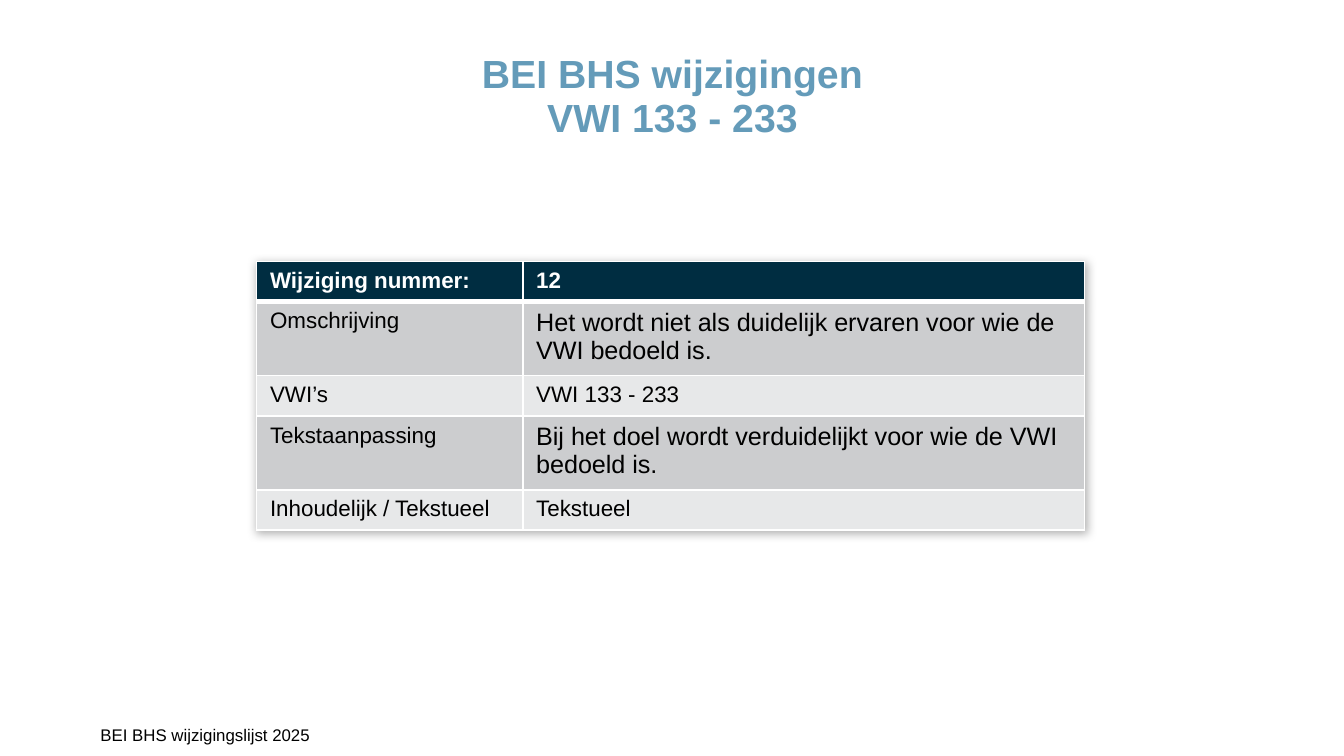
from lxml import etree
from pptx import Presentation, util as u
from pptx.dml.color import RGBColor
from pptx.enum import text as t
from pptx.oxml import ns

FONT = "Arial"
BLUE, NAVY, BLACK, WHITE = "649BB9", "002D41", "000000", "FFFFFF"
BANDS = ["CCCDCF", "E7E8E9"]


def rgb(code):
    return RGBColor.from_string(code)


def node(root, tag, **attrs):
    return etree.SubElement(root, ns.qn(tag), attrs)


class Deck:
    def __init__(self, wide, high):
        self.prs = Presentation()
        self.prs.slide_width, self.prs.slide_height = u.Cm(wide), u.Cm(high)
        self.slide = self.prs.slides.add_slide(self.prs.slide_layouts[6])

    def run(self, para, words, size, color, bold=False):
        run = para.add_run()
        run.text = words
        font = run.font
        font.name, font.size, font.bold = FONT, u.Pt(size), bold
        font.color.rgb = rgb(color)

    def text(self, box, lines, size, color, bold=False,
             align=t.PP_ALIGN.LEFT, space=1.0, inset=0):
        frame = self.slide.shapes.add_textbox(*map(u.Cm, box)).text_frame
        frame.word_wrap = True
        frame.margin_top = frame.margin_right = frame.margin_bottom = 0
        frame.margin_left = u.Cm(inset)
        para = frame.paragraphs[0]
        para.alignment, para.line_spacing = align, space
        for i, line in enumerate(lines):
            if i:
                para.add_line_break()
            self.run(para, line, size, color, bold)

    def edges(self, cell, base):
        props = cell._tc.get_or_add_tcPr()
        for side, width in zip("LRTB", (1, 1, 1, base)):
            line = node(props, f"a:ln{side}", w=str(u.Pt(width)))
            node(node(line, "a:solidFill"), "a:srgbClr", val=WHITE)

    def shade(self, grid):
        effects = node(grid._tbl.tblPr, "a:effectLst")
        # Effects come before the style id
        grid._tbl.tblPr.insert(0, effects)
        glow = node(effects, "a:outerShdw", blurRad=str(u.Pt(5)),
                    dist=str(u.Pt(1)), dir="5400000", rotWithShape="0")
        node(node(glow, "a:srgbClr", val=BLACK), "a:alpha", val="30000")

    def table(self, left, top, cols, rows, data):
        grid = self.slide.shapes.add_table(
            len(rows), len(cols), u.Cm(left), u.Cm(top),
            u.Cm(sum(cols)), u.Cm(sum(rows))).table
        for col, wide in zip(grid.columns, cols):
            col.width = u.Cm(wide)
        for r, (high, line) in enumerate(zip(rows, data)):
            grid.rows[r].height = u.Cm(high)
            head = r == 0
            for c, words in enumerate(line):
                cell = grid.cell(r, c)
                # Long answers are set larger
                size = 13.5 if len(words) > 40 else 12
                self.run(cell.text_frame.paragraphs[0], words, size,
                         WHITE if head else BLACK, head)
                self.edges(cell, 3 if head else 1)
                cell.fill.solid()
                cell.fill.fore_color.rgb = rgb(
                    NAVY if head else BANDS[(r - 1) % 2])
        self.shade(grid)


def main():
    deck = Deck(25.4, 14.29)

    # Title
    deck.text((4.85, 0.99, 15.72, 2.39),
              ["BEI BHS wijzigingen", "VWI 133 - 233"], 21, BLUE,
              bold=True, align=t.PP_ALIGN.CENTER, space=0.95)

    # Change details
    low, tall = 0.76, 1.34
    deck.table(4.85, 4.94, [5.03, 10.62], [low, tall, low, tall, low], [
        ("Wijziging nummer:", "12"),
        ("Omschrijving",
         "Het wordt niet als duidelijk ervaren voor wie de VWI bedoeld is."),
        ("VWI’s", "VWI 133 - 233"),
        ("Tekstaanpassing",
         "Bij het doel wordt verduidelijkt voor wie de VWI bedoeld is."),
        ("Inhoudelijk / Tekstueel", "Tekstueel"),
    ])

    # Footer
    deck.text((0, 13.69, 12, 0.6), ["BEI BHS wijzigingslijst 2025"],
              9, BLACK, inset=1.9)

    deck.prs.save("out.pptx")


if __name__ == "__main__":
    main()
